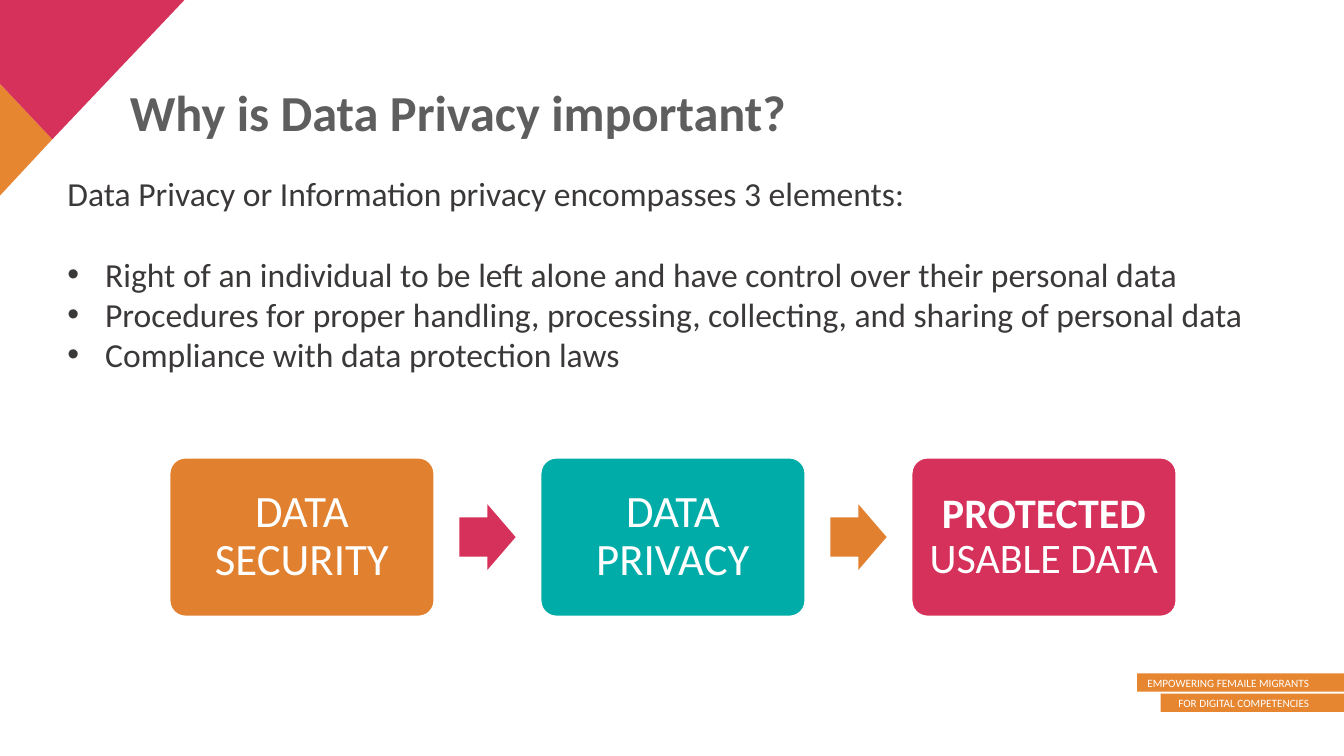
"""Build the slide on why data privacy is important."""
from dataclasses import dataclass

from lxml import etree
from pptx import Presentation
from pptx import util as u
from pptx.dml.color import RGBColor
from pptx.enum import shapes, text
from pptx.oxml import ns

TITLE = "Why is Data Privacy important?"
INTRO = "Data Privacy or Information privacy encompasses 3 elements:"
ELEMENTS = [
    "Right of an individual to be left alone and have control over their personal data",
    "Procedures for proper handling, processing, collecting, and sharing of personal data",
    "Compliance with data protection laws",
]
STEPS = [
    ("orange", 32, [("DATA SECURITY", False)]),
    ("teal", 32, [("DATA PRIVACY", False)]),
    ("pink", 30, [("PROTECTED", True), (" USABLE DATA", False)]),
]
ARROWS = ["pink", "orange"]
CORNER = [
    ("amber", [(0, 2.11), (1.32, 3.51), (0, 4.93)]),
    ("pink", [(0, 0), (4.65, 0), (1.32, 3.51), (0, 2.11)]),
]
TAGLINE = [("EMPOWERING FEMAILE MIGRANTS", 5.21), ("FOR DIGITAL COMPETENCIES", 4.62)]


@dataclass(frozen=True)
class Theme:
    """Colours, font and type sizes."""
    font: str = "Calibri"
    orange: str = "E18130"
    amber: str = "E78631"
    pink: str = "D6315A"
    teal: str = "00ACA7"
    white: str = "FFFFFF"
    heading: str = "5E5E5E"
    body: str = "3B3838"
    title_size: int = 36
    body_size: int = 24
    tag_size: int = 8


T = Theme()
WIDTH, HEIGHT = 33.87, 19.05
BOX_W, BOX_H, BOX_LEFT, BOX_TOP, BOX_STEP = 6.68, 4.01, 4.27, 11.53, 9.35
ARROW_W, ARROW_H = 1.42, 1.65
BAR_H, BAR_TOP, BAR_STEP = 0.46, 16.97, 0.51


def write(p, words, size=T.body_size, color=T.body, bold=False):
    """Add a formatted run to a paragraph."""
    r = p.add_run()
    r.text = words
    f = r.font
    f.name, f.size, f.bold = T.font, u.Pt(size), bold
    f.color.rgb = RGBColor.from_string(color)


def paint(sp, color, outline=None):
    """Give a shape a flat fill and an optional white outline."""
    sp.shadow.inherit = False
    sp.fill.solid()
    sp.fill.fore_color.rgb = RGBColor.from_string(color)
    if outline:
        sp.line.color.rgb = RGBColor.from_string(T.white)
        sp.line.width = u.Pt(outline)
    else:
        sp.line.fill.background()


def add_preset(s, kind, left, top, width, height, color, outline=None):
    """Add a painted preset shape, measured in centimetres."""
    sp = s.shapes.add_shape(kind, u.Cm(left), u.Cm(top), u.Cm(width), u.Cm(height))
    paint(sp, color, outline)
    return sp


def set_frame(tf, anchor, sides=0.25, ends=0.13):
    """Set wrapping, anchor and insets of a text frame."""
    tf.word_wrap, tf.auto_size = True, text.MSO_AUTO_SIZE.NONE
    tf.vertical_anchor = anchor
    tf.margin_left = tf.margin_right = u.Cm(sides)
    tf.margin_top = tf.margin_bottom = u.Cm(ends)
    return tf


def place(sp, left, top, width, height):
    """Move a placeholder and return its text frame."""
    sp.left, sp.top, sp.width, sp.height = map(u.Cm, (left, top, width, height))
    return set_frame(sp.text_frame, text.MSO_ANCHOR.TOP)


def set_bullet(p, char=None, indent=0.0):
    """Set or remove the bullet of a paragraph."""
    pr = p._p.get_or_add_pPr()
    pr.set("marL", str(u.Cm(indent)))
    pr.set("indent", str(-u.Cm(indent)))
    if char:
        etree.SubElement(pr, ns.qn("a:buFont")).set("typeface", "Arial")
        etree.SubElement(pr, ns.qn("a:buChar")).set("char", char)
    else:
        etree.SubElement(pr, ns.qn("a:buNone"))


def add_corner(s):
    for color, points in CORNER:
        start, *rest = [(u.Cm(x), u.Cm(y)) for x, y in points]
        outline = s.shapes.build_freeform(*start)
        outline.add_line_segments(rest, close=True)
        paint(outline.convert_to_shape(), getattr(T, color))


def add_tagline(s):
    for i, (words, width) in enumerate(TAGLINE):
        sp = add_preset(s, shapes.MSO_SHAPE.RECTANGLE, WIDTH - width,
                        BAR_TOP + i * BAR_STEP, width, BAR_H, T.amber)
        tf = set_frame(sp.text_frame, text.MSO_ANCHOR.MIDDLE, sides=0, ends=0)
        tf.margin_right = u.Cm(0.87)
        p = tf.paragraphs[0]
        p.alignment = text.PP_ALIGN.RIGHT
        write(p, words, size=T.tag_size, color=T.white)


def add_text(s):
    p = place(s.shapes.title, 3.02, 2.08, 29.44, 2.64).paragraphs[0]
    p.alignment, p.line_spacing = text.PP_ALIGN.LEFT, 0.9
    write(p, TITLE, size=T.title_size, color=T.heading, bold=True)

    tf = place(s.placeholders[1], 1.45, 4.22, 31.01, 6.6)
    for i, words in enumerate([INTRO, *ELEMENTS]):
        p = tf.add_paragraph() if i else tf.paragraphs[0]
        p.space_before = u.Pt(29 if i == 1 else 0)
        set_bullet(p, "•" if i else None, 0.95 if i else 0)
        write(p, words)


def add_flow(s):
    for i, (color, size, runs) in enumerate(STEPS):
        sp = add_preset(s, shapes.MSO_SHAPE.ROUNDED_RECTANGLE, BOX_LEFT + i * BOX_STEP,
                        BOX_TOP, BOX_W, BOX_H, getattr(T, color), outline=1.5)
        sp.adjustments[0] = 0.1
        p = set_frame(sp.text_frame, text.MSO_ANCHOR.MIDDLE, sides=0.31, ends=0.31).paragraphs[0]
        p.alignment, p.line_spacing = text.PP_ALIGN.CENTER, 0.9
        for words, bold in runs:
            write(p, words, size=size, color=T.white, bold=bold)

    gap = BOX_STEP - BOX_W
    for i, color in enumerate(ARROWS):
        left = BOX_LEFT + i * BOX_STEP + BOX_W + (gap - ARROW_W) / 2
        sp = add_preset(s, shapes.MSO_SHAPE.RIGHT_ARROW, left,
                        BOX_TOP + (BOX_H - ARROW_H) / 2, ARROW_W, ARROW_H, getattr(T, color))
        sp.adjustments[0], sp.adjustments[1] = 0.6, 0.5


def main():
    prs = Presentation()
    prs.slide_width, prs.slide_height = u.Cm(WIDTH), u.Cm(HEIGHT)
    s = prs.slides.add_slide(prs.slide_layouts[1])
    add_corner(s)
    add_tagline(s)
    add_text(s)
    add_flow(s)
    prs.save("out.pptx")


if __name__ == "__main__":
    main()
